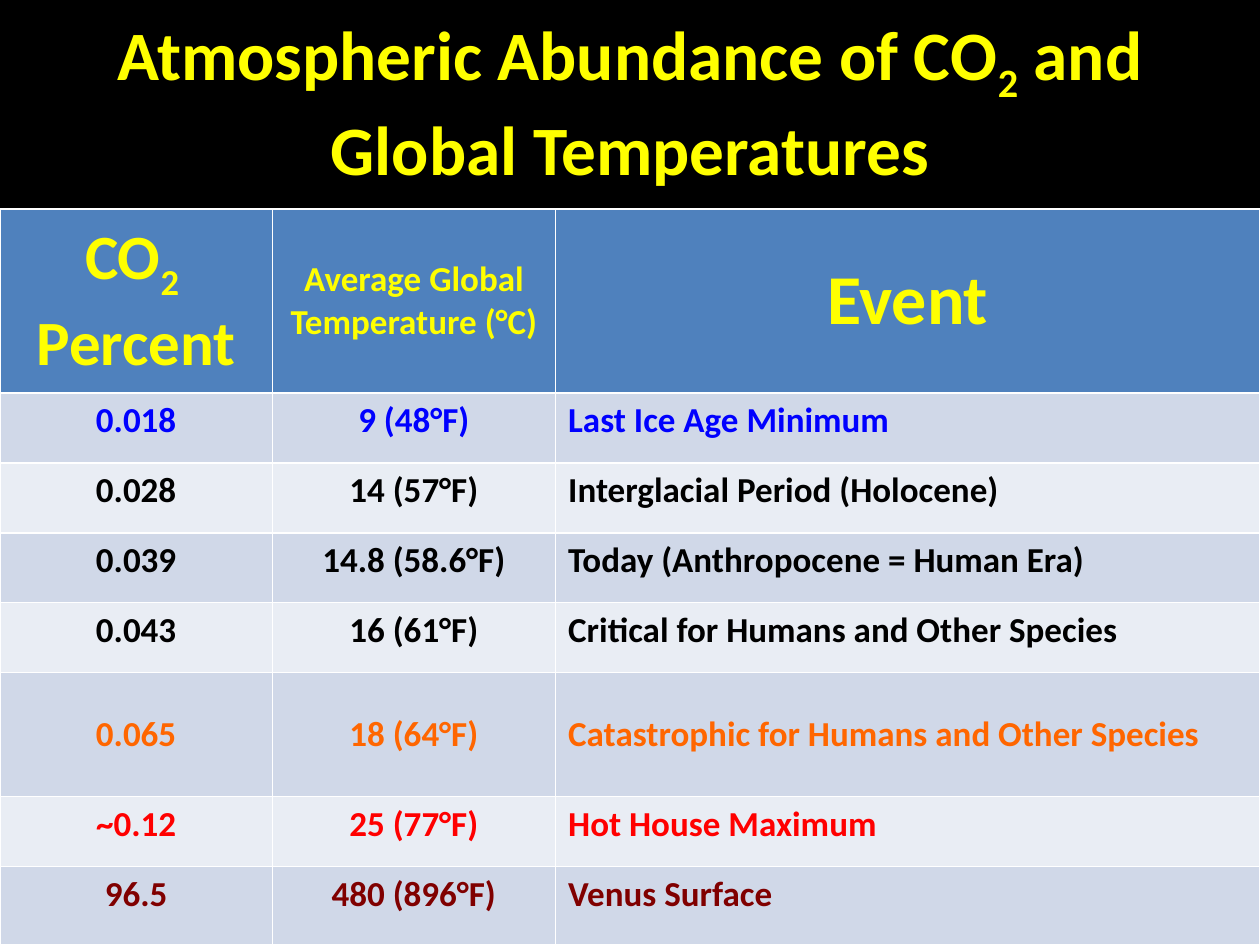
from pptx import Presentation
from pptx.dml.color import RGBColor
from pptx.enum import text
from pptx.util import Cm, Pt

COLORS = {
    "background": "000000",
    "heading": "FFFF00",
    "header": "4F81BD",
    "band_dark": "D0D8E8",
    "band_light": "E9EDF4",
    "cold": "0000FF",
    "normal": "000000",
    "catastrophic": "FF6600",
    "hot": "FF0000",
    "venus": "800000",
}
FONT = "Calibri"
CENTER = text.PP_ALIGN.CENTER
LEFT = text.PP_ALIGN.LEFT
MIDDLE = text.MSO_ANCHOR.MIDDLE
TOP = text.MSO_ANCHOR.TOP

COLUMN_WIDTHS = [5.49, 5.71, 14.2]
HEADER_HEIGHT = 3.71
ROW_HEIGHT = 1.41
HEADERS = [
    ([[("CO", False), ("2 ", True)], [("Percent", False)]], 36),
    ([[("Average Global Temperature (°C)", False)]], 20),
    ([[("Event", False)]], 40),
]
EVENTS = [
    ("0.018", "9 (48°F)", "Last Ice Age Minimum", "cold", ROW_HEIGHT, TOP),
    ("0.028", "14 (57°F)", "Interglacial Period (Holocene)", "normal", ROW_HEIGHT, TOP),
    ("0.039", "14.8 (58.6°F)", "Today (Anthropocene = Human Era)", "normal", ROW_HEIGHT, TOP),
    ("0.043", "16 (61°F)", "Critical for Humans and Other Species", "normal", ROW_HEIGHT, TOP),
    ("0.065", "18 (64°F)", "Catastrophic for Humans and Other Species", "catastrophic", 2.5, MIDDLE),
    ("~0.12", "25 (77°F)", "Hot House Maximum", "hot", ROW_HEIGHT, TOP),
    ("96.5", "480 (896°F)", "Venus Surface", "venus", 1.58, TOP),
]


def write_paragraph(paragraph, runs, size, color, alignment=CENTER):
    paragraph.alignment = alignment
    font = paragraph.font
    font.name = FONT
    font.size = Pt(size)
    font.bold = True
    font.color.rgb = RGBColor.from_string(COLORS[color])
    for words, subscript in runs:
        run = paragraph.add_run()
        run.text = words
        if subscript:
            run._r.get_or_add_rPr().set("baseline", "-25000")


def fill_cell(cell, paragraphs, size, color, fill, anchor, alignment=CENTER):
    cell.fill.solid()
    cell.fill.fore_color.rgb = RGBColor.from_string(COLORS[fill])
    cell.vertical_anchor = anchor
    frame = cell.text_frame
    for index, runs in enumerate(paragraphs):
        paragraph = frame.add_paragraph() if index else frame.paragraphs[0]
        write_paragraph(paragraph, runs, size, color, alignment)


def place_title(slide, left, top, width, height):
    title = slide.shapes.title
    title.left, title.top, title.width, title.height = map(Cm, (left, top, width, height))
    frame = title.text_frame
    frame.auto_size = text.MSO_AUTO_SIZE.NONE
    frame.word_wrap = True
    frame.vertical_anchor = MIDDLE
    runs = [("Atmospheric Abundance of CO", False), ("2", True), (" and Global Temperatures", False)]
    write_paragraph(frame.paragraphs[0], runs, 39.6, "heading")


def place_table(slide, left, top, width, height):
    frame = slide.shapes.add_table(
        len(EVENTS) + 1, len(HEADERS), Cm(left), Cm(top), Cm(width), Cm(height))
    table = frame.table
    for column, column_width in zip(table.columns, COLUMN_WIDTHS):
        column.width = Cm(column_width)

    table.rows[0].height = Cm(HEADER_HEIGHT)
    for index, (paragraphs, size) in enumerate(HEADERS):
        fill_cell(table.cell(0, index), paragraphs, size, "heading", "header", MIDDLE)

    for row, (*values, color, row_height, anchor) in enumerate(EVENTS, start=1):
        table.rows[row].height = Cm(row_height)
        fill = "band_dark" if row % 2 else "band_light"
        for index, (value, alignment) in enumerate(zip(values, (CENTER, CENTER, LEFT))):
            fill_cell(table.cell(row, index), [[(value, False)]], 20, color, fill, anchor, alignment)


def main():
    presentation = Presentation()
    presentation.slide_width = Cm(25.4)
    presentation.slide_height = Cm(19.05)
    slide = presentation.slides.add_slide(presentation.slide_layouts[5])
    background = slide.background.fill
    background.solid()
    background.fore_color.rgb = RGBColor.from_string(COLORS["background"])
    place_title(slide, 1.9, 0.43, 21.6, 3.18)
    place_table(slide, 0, 4.21, 25.4, 14.84)
    presentation.save("out.pptx")


if __name__ == "__main__":
    main()
